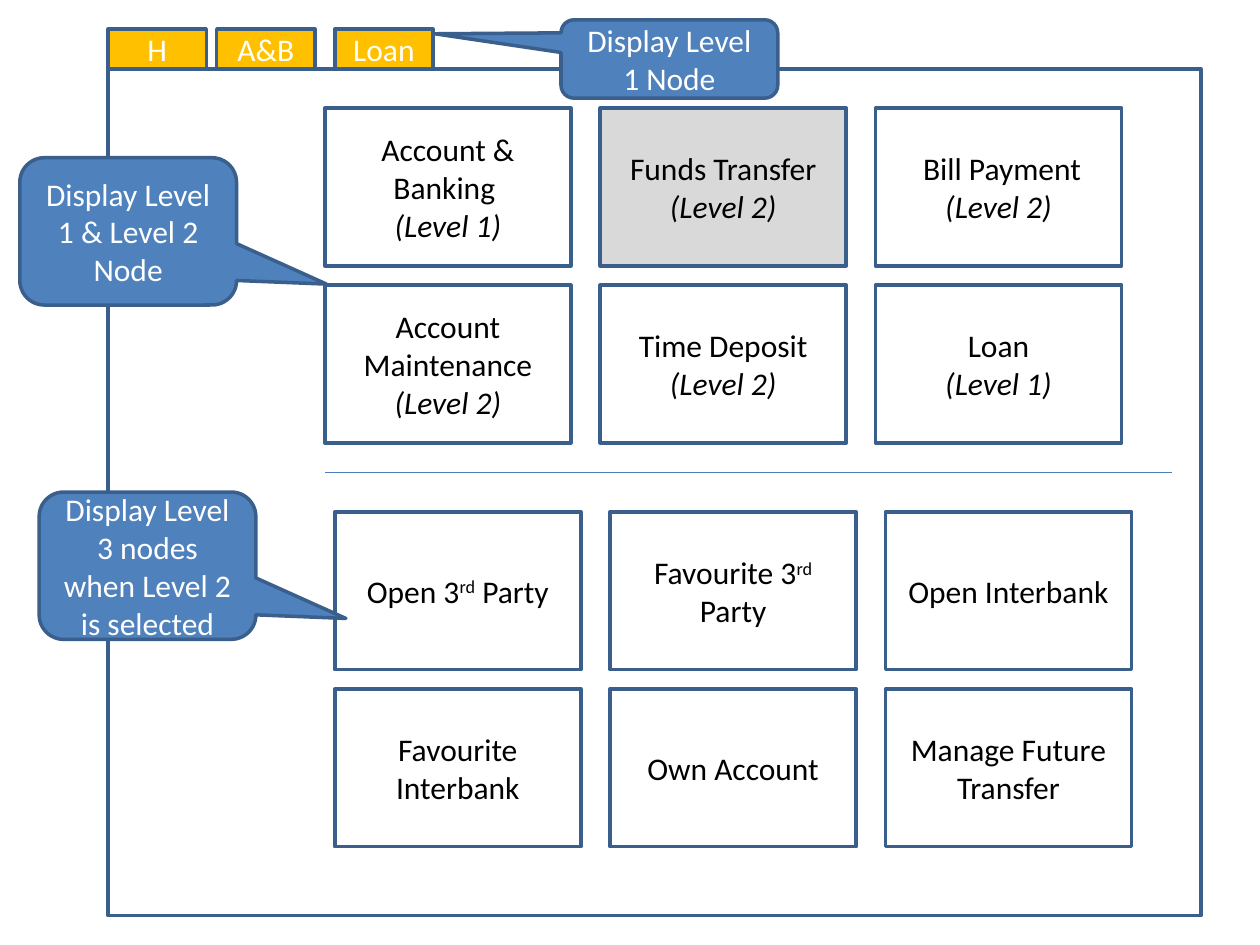
"""Build a slide showing how menu levels map to tabs, tiles and sub-tiles."""
from dataclasses import dataclass

from lxml.etree import SubElement
from pptx import Presentation
from pptx.dml.color import RGBColor
from pptx.enum.shapes import MSO_CONNECTOR, MSO_SHAPE
from pptx.enum.text import MSO_ANCHOR, PP_ALIGN
from pptx.oxml.ns import qn
from pptx.util import Cm, Pt


@dataclass(frozen=True)
class Theme:
    white: RGBColor = RGBColor.from_string("FFFFFF")
    black: RGBColor = RGBColor.from_string("000000")
    grey: RGBColor = RGBColor.from_string("D9D9D9")
    gold: RGBColor = RGBColor.from_string("FFC000")
    blue: RGBColor = RGBColor.from_string("4F81BD")
    edge: RGBColor = RGBColor.from_string("3A5F8C")
    rule: RGBColor = RGBColor.from_string("4B7EBC")
    font: str = "Calibri"
    size: Pt = Pt(18)


theme = Theme()


def write(frame, text, color=theme.black, size=theme.size, align=PP_ALIGN.CENTER):
    """Fill a frame: later lines are italic, parts between carets are raised."""
    frame.word_wrap = True
    frame.vertical_anchor = MSO_ANCHOR.MIDDLE
    for row, line in enumerate(text.split("\n")):
        para = frame.add_paragraph() if row else frame.paragraphs[0]
        para.alignment = align
        for part, words in enumerate(line.split("^")):
            run = para.add_run()
            run.text = words
            run.font.name, run.font.size = theme.font, size
            run.font.color.rgb = color
            if row:
                run.font.italic = True
            if part % 2:
                run.font._element.set("baseline", "30000")


def draw(kind, left, top, width, height, fill):
    """Add an outlined shape, with lengths in centimetres."""
    shape = slide.shapes.add_shape(kind, Cm(left), Cm(top), Cm(width), Cm(height))
    shape.shadow.inherit = False
    shape.fill.solid()
    shape.fill.fore_color.rgb = fill
    shape.line.color.rgb = theme.edge
    shape.line.width = Pt(2)
    return shape


deck = Presentation()
deck.slide_width, deck.slide_height = Cm(25.4), Cm(19.05)
slide = deck.slides.add_slide(deck.slide_layouts[6])

draw(MSO_SHAPE.RECTANGLE, 2.18, 1.39, 22.03, 17.07, theme.white)

for left, name in [(2.18, "H"), (4.37, "A&B"), (6.75, "Loan")]:
    tab = draw(MSO_SHAPE.RECTANGLE, left, 0.59, 1.98, 0.79, theme.gold)
    write(tab.text_frame, name, color=theme.white)

upper = [
    "Account & Banking \n(Level 1)", "Funds Transfer\n(Level 2)",
    " Bill Payment\n(Level 2)", "Account Maintenance\n(Level 2)",
    "Time Deposit\n(Level 2)", "Loan\n(Level 1)",
]
lower = [
    "Open 3^rd^ Party", "Favourite 3^rd^ Party", "Open Interbank",
    "Favourite Interbank", "Own Account", "Manage Future Transfer",
]
chosen = upper[1]
for left, top, names in [(6.55, 2.18, upper), (6.75, 10.32, lower)]:
    for spot, name in enumerate(names):
        row, col = divmod(spot, 3)
        fill = theme.grey if name == chosen else theme.white
        tile = draw(MSO_SHAPE.RECTANGLE, left + col * 5.55, top + row * 3.57,
                    4.96, 3.18, fill)
        write(tile.text_frame, name)

rule = slide.shapes.add_connector(
    MSO_CONNECTOR.STRAIGHT, Cm(6.55), Cm(9.53), Cm(23.62), Cm(9.53))
rule.line.color.rgb = theme.rule
rule.line.width = Pt(0.75)
SubElement(rule._element.spPr, qn("a:effectLst"))

notes = [
    (0.79, 9.92, 2.97, (0.915, 0.358), "Display Level 3 nodes when Level 2 is selected"),
    (0.4, 3.18, 2.97, (0.915, 0.358), "Display Level 1 & Level 2 Node"),
    (11.31, 0.4, 1.58, (-1.082, -0.321), "Display Level 1 Node"),
]
for left, top, height, tip, text in notes:
    note = draw(MSO_SHAPE.ROUNDED_RECTANGULAR_CALLOUT, left, top, 4.37, height, theme.blue)
    note.adjustments[0], note.adjustments[1] = tip
    write(note.text_frame, text, color=theme.white)

deck.save("out.pptx")
